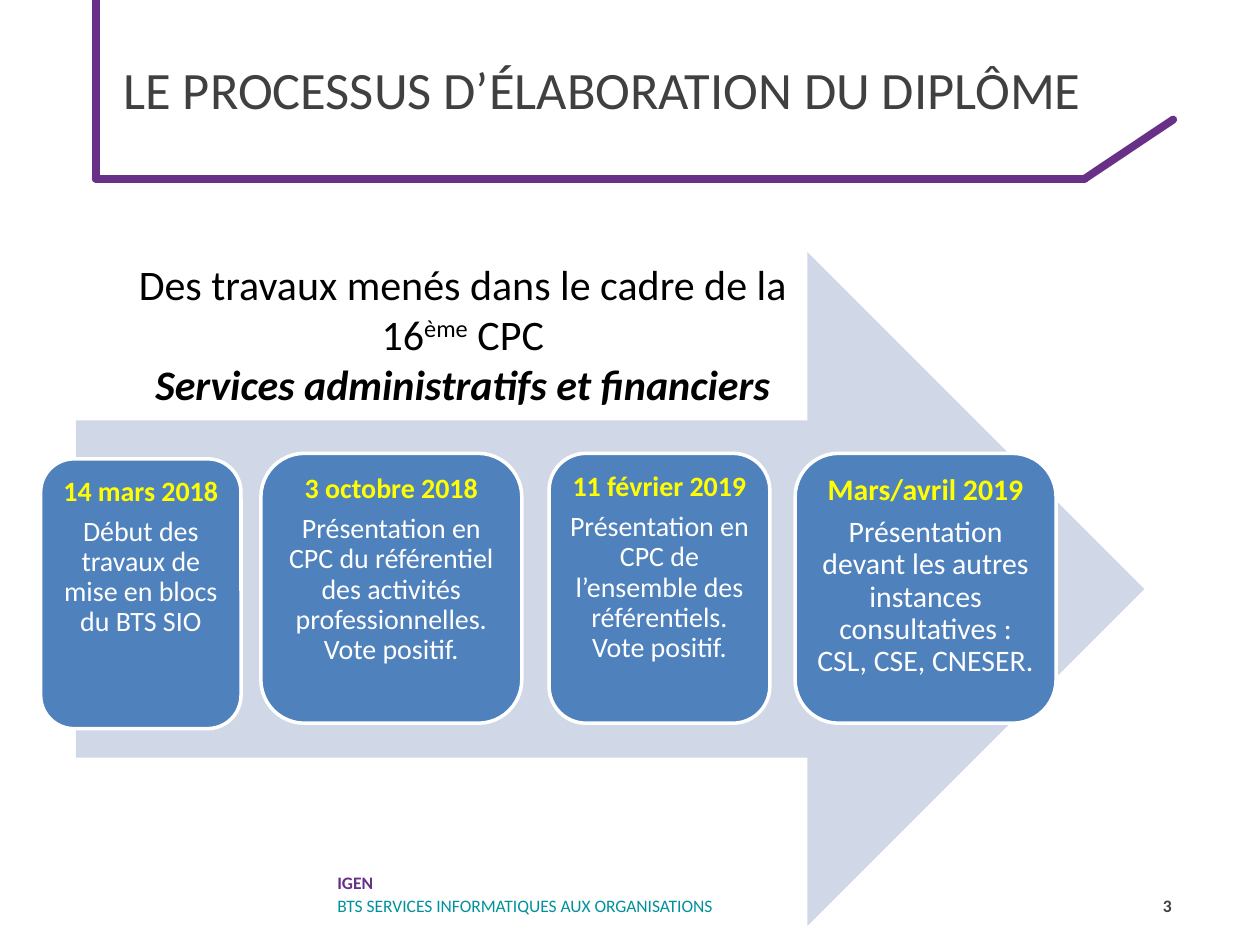
from itertools import pairwise

from lxml import etree
from pptx import Presentation
from pptx.dml.color import RGBColor
from pptx.enum.shapes import MSO_CONNECTOR, MSO_SHAPE
from pptx.enum.text import MSO_ANCHOR, PP_ALIGN
from pptx.oxml.ns import qn
from pptx.util import Cm, Pt

STRAIGHT = MSO_CONNECTOR.STRAIGHT
ARROW, CARD = MSO_SHAPE.RIGHT_ARROW, MSO_SHAPE.ROUNDED_RECTANGLE
TOP, MIDDLE = MSO_ANCHOR.TOP, MSO_ANCHOR.MIDDLE
LEFT, CENTER, RIGHT = PP_ALIGN.LEFT, PP_ALIGN.CENTER, PP_ALIGN.RIGHT

FONT = "Calibri"
COLORS = {
    "purple": "683086",
    "teal": "00919D",
    "grey": "404040",
    "black": "000000",
    "white": "FFFFFF",
    "yellow": "FFFF00",
    "blue": "4F81BD",
    "pale": "D0D8E8",
}

FRAME_POINTS = [(1.93, 0), (1.93, 3.6), (21.87, 3.6), (23.65, 2.41)]
CARD_HEIGHT = 5.44
# left, top, width, text size, date, description
STEPS = [
    (0.82, 9.25, 4.04, 16, "14 mars 2018",
     "Début des travaux de mise en blocs du BTS SIO"),
    (5.26, 9.14, 5.26, 16, "3 octobre 2018",
     "Présentation en CPC du référentiel des activités professionnelles. Vote positif."),
    (11.07, 9.14, 4.45, 16, "11 février 2019",
     "Présentation en CPC de l’ensemble des référentiels.\vVote positif."),
    (16.03, 9.14, 5.26, 17, "Mars/avril 2019",
     "Présentation devant les autres instances consultatives : CSL, CSE, CNESER."),
]


def color(name):
    return RGBColor.from_string(COLORS[name])


def write(frame, text, *, size, fill="black", bold=False, italic=False, align=LEFT,
          spacing=None, after=None, baseline=None, same_line=False):
    """Append text to a frame, as a new paragraph unless same_line is set."""
    paragraph = frame.paragraphs[-1]
    if paragraph.runs and not same_line:
        paragraph = frame.add_paragraph()
    if not same_line:
        paragraph.alignment = align
        paragraph.line_spacing = spacing
        paragraph.space_after = after
    for index, line in enumerate(text.split("\v")):
        if index:
            paragraph.add_line_break()
        run = paragraph.add_run()
        run.text = line
        font = run.font
        font.name, font.size = FONT, Pt(size)
        font.bold, font.italic = bold, italic
        font.color.rgb = color(fill)
        if baseline:
            run._r.get_or_add_rPr().set("baseline", str(baseline * 1000))


def add_text_box(slide, left, top, width, height, anchor=TOP):
    box = slide.shapes.add_textbox(Cm(left), Cm(top), Cm(width), Cm(height))
    frame = box.text_frame
    frame.word_wrap = True
    frame.vertical_anchor = anchor
    return frame


def add_filled_shape(slide, kind, left, top, width, height, fill):
    shape = slide.shapes.add_shape(kind, Cm(left), Cm(top), Cm(width), Cm(height))
    shape.shadow.inherit = False
    shape.fill.solid()
    shape.fill.fore_color.rgb = color(fill)
    shape.line.fill.background()
    return shape


def add_frame_line(slide, start, end):
    line = slide.shapes.add_connector(STRAIGHT, *map(Cm, start + end))
    line.line.color.rgb = color("purple")
    line.line.width = Pt(4.5)
    line.line._get_or_add_ln().set("cap", "rnd")
    etree.SubElement(line._element.spPr, qn("a:effectLst"))


def add_step(slide, left, top, width, size, date, description):
    card = add_filled_shape(slide, CARD, left, top, width, CARD_HEIGHT, "blue")
    card.line.color.rgb = color("white")
    card.line.width = Pt(2)
    frame = card.text_frame
    frame.word_wrap = True
    frame.vertical_anchor = TOP
    frame.margin_left = frame.margin_right = Cm(0.17)
    frame.margin_top = frame.margin_bottom = Cm(0.17)
    layout = dict(size=size, align=CENTER, spacing=0.9, after=Pt(0.35 * size))
    write(frame, date, fill="yellow", bold=True, **layout)
    write(frame, description, fill="white", **layout)


def add_footer(slide):
    footer = add_text_box(slide, 6.55, 17.07, 11.33, 1.88, MIDDLE)
    write(footer, "IGEN", size=10, fill="purple", bold=True, spacing=Pt(13.2))
    write(footer, "BTS SERVICES INFORMATIQUES AUX ORGANISATIONS", size=10,
          fill="teal", spacing=Pt(13.2))
    number = add_text_box(slide, 22.63, 17.75, 1.24, 1.02, MIDDLE)
    write(number, "3", size=10, fill="grey", bold=True, align=RIGHT)


def add_heading(slide):
    heading = add_text_box(slide, 2.13, 5.08, 14.4, 3.33)
    write(heading, "Des travaux menés dans le cadre de la 16", size=24, align=CENTER)
    write(heading, "ème", size=24, baseline=30, same_line=True)
    write(heading, " CPC", size=24, same_line=True)
    write(heading, "Services administratifs et financiers", size=24, bold=True,
          italic=True, align=CENTER)


def main():
    presentation = Presentation()
    presentation.slide_width, presentation.slide_height = Cm(25.4), Cm(19.05)
    slide = presentation.slides.add_slide(presentation.slide_layouts[6])

    for start, end in pairwise(FRAME_POINTS):
        add_frame_line(slide, start, end)
    add_footer(slide)
    title = add_text_box(slide, 2.24, 0, 21.89, 3.58, MIDDLE)
    write(title, "LE PROCESSUS D’ÉLABORATION DU DIPLÔME", size=30, fill="grey")

    add_filled_shape(slide, ARROW, 1.53, 5.08, 21.54, 13.59, "pale")
    for step in STEPS:
        add_step(slide, *step)
    add_heading(slide)

    presentation.save("out.pptx")


if __name__ == "__main__":
    main()
